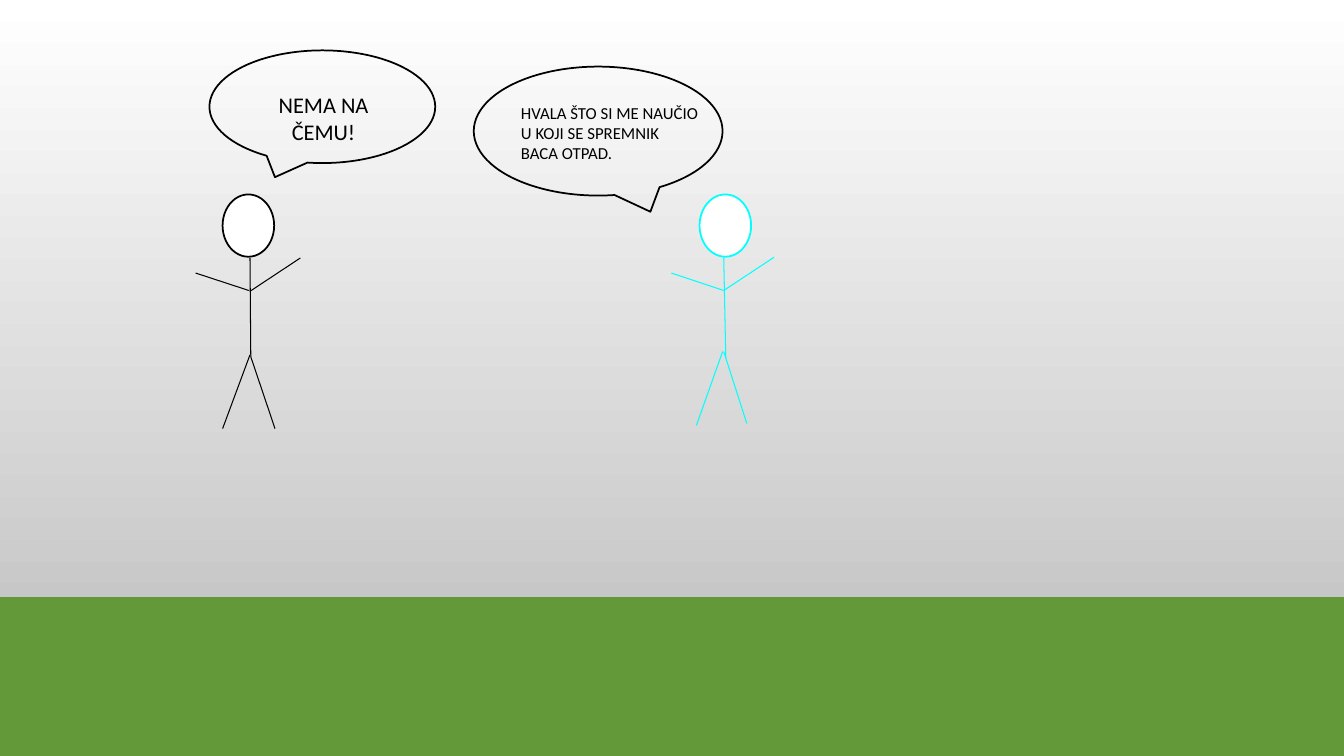
"""Build a slide of two stick figures talking on green ground."""
from dataclasses import dataclass

from lxml import etree
from pptx import Presentation
from pptx.dml.color import RGBColor
from pptx.enum.shapes import MSO_CONNECTOR, MSO_SHAPE
from pptx.enum.text import MSO_AUTO_SIZE, PP_ALIGN
from pptx.oxml.ns import qn
from pptx.shapes.autoshape import Shape
from pptx.slide import Slide
from pptx.util import Cm, Pt

STRAIGHT = MSO_CONNECTOR.STRAIGHT
ELLIPSE = MSO_SHAPE.OVAL
RECTANGLE = MSO_SHAPE.RECTANGLE
CALLOUT = MSO_SHAPE.OVAL_CALLOUT
LEFT = PP_ALIGN.LEFT
CENTER = PP_ALIGN.CENTER
FIT_SHAPE = MSO_AUTO_SIZE.SHAPE_TO_FIT_TEXT

COLORS = {
    "white": "FFFFFF",
    "gray": "B9B9B9",
    "black": "000000",
    "cyan": "00FFFF",
    "green": "649939",
}
Box = tuple[float, float, float, float]


@dataclass(frozen=True)
class Figure:
    color: str
    head: Box
    limbs: tuple[Box, ...]


@dataclass(frozen=True)
class Speech:
    bubble: Box
    tip_x: float
    text: str
    text_box: Box
    size: int
    align: PP_ALIGN
    side_margin: float


FIGURES = (
    Figure("black", (5.61, 4.9, 1.3, 1.57), (
        (6.3, 6.5, 6.32, 8.99),
        (6.3, 7.34, 7.57, 6.5),
        (4.93, 6.88, 6.27, 7.32),
        (6.32, 8.99, 6.93, 10.8),
        (6.3, 8.94, 5.61, 10.8),
    )),
    Figure("cyan", (17.63, 4.9, 1.3, 1.57), (
        (18.24, 6.5, 18.29, 9.02),
        (18.24, 7.32, 19.51, 6.48),
        (16.92, 6.88, 18.24, 7.32),
        (18.24, 8.86, 18.82, 10.67),
        (18.21, 8.86, 17.55, 10.72),
    )),
)
SPEECHES = (
    Speech((11.94, 1.68, 6.27, 3.25), 0.21,
           "HVALA ŠTO SI ME NAUČIO U KOJI SE SPREMNIK BACA OTPAD.",
           (12.88, 2.46, 5.02, 1.8), 12, LEFT, 0.25),
    Speech((5.28, 1.27, 5.69, 2.84), -0.21, "NEMA NA ČEMU!",
           (5.92, 2.18, 4.47, 1.6), 16, CENTER, 0.5),
)


def color_of(name: str) -> RGBColor:
    """Return the named colour."""
    return RGBColor.from_string(COLORS[name])


def add_outlined(slide: Slide, kind: MSO_SHAPE, box: Box, line: str,
                 fill: str | None = None) -> Shape:
    """Add a preset shape with an outline and an optional fill."""
    shape = slide.shapes.add_shape(kind, *map(Cm, box))
    shape.shadow.inherit = False
    if fill:
        shape.fill.solid()
        shape.fill.fore_color.rgb = color_of(fill)
    else:
        shape.fill.background()
    shape.line.color.rgb = color_of(line)
    shape.line.width = Pt(1.25)
    return shape


def add_text(slide: Slide, text: str, *, box: Box, size: int,
             align: PP_ALIGN, side_margin: float) -> None:
    """Add a wrapping text box."""
    frame = slide.shapes.add_textbox(*map(Cm, box)).text_frame
    frame.word_wrap = True
    frame.auto_size = FIT_SHAPE
    frame.margin_left = frame.margin_right = Cm(side_margin)
    paragraph = frame.paragraphs[0]
    paragraph.text = text
    paragraph.alignment = align
    paragraph.font.name = "Calibri"
    paragraph.font.size = Pt(size)
    paragraph.font.color.rgb = color_of("black")


def add_limb(slide: Slide, ends: Box, color: str) -> None:
    """Add one thin straight line of a figure."""
    limb = slide.shapes.add_connector(STRAIGHT, *map(Cm, ends))
    limb.line.color.rgb = color_of(color)
    limb.line.width = Pt(0.75)
    etree.SubElement(limb._element.spPr, qn("a:effectLst"))


def add_figure(slide: Slide, figure: Figure) -> None:
    """Add the limbs and the head of a stick figure."""
    for ends in figure.limbs:
        add_limb(slide, ends, figure.color)
    add_outlined(slide, ELLIPSE, figure.head, figure.color, "white")


def add_speech(slide: Slide, speech: Speech) -> None:
    """Add a speech bubble and its words."""
    bubble = add_outlined(slide, CALLOUT, speech.bubble, "black")
    bubble.adjustments[0] = speech.tip_x
    bubble.adjustments[1] = 0.625
    add_text(slide, speech.text, box=speech.text_box, size=speech.size,
             align=speech.align, side_margin=speech.side_margin)


def paint_background(slide: Slide) -> None:
    """Fill the background from white at the top to gray at the bottom."""
    fill = slide.background.fill
    fill.gradient()
    fill.gradient_angle = 270
    for stop, name in zip(fill.gradient_stops, ("white", "gray")):
        stop.color.rgb = color_of(name)


def main() -> None:
    """Build and save the presentation."""
    presentation = Presentation()
    presentation.slide_width = Cm(33.87)
    presentation.slide_height = Cm(19.05)
    slide = presentation.slides.add_slide(presentation.slide_layouts[6])
    paint_background(slide)
    for figure in FIGURES:
        add_figure(slide, figure)
    add_outlined(slide, RECTANGLE, (0, 15.06, 33.87, 3.99), "green", "green")
    for speech in SPEECHES:
        add_speech(slide, speech)
    presentation.save("out.pptx")


if __name__ == "__main__":
    main()
